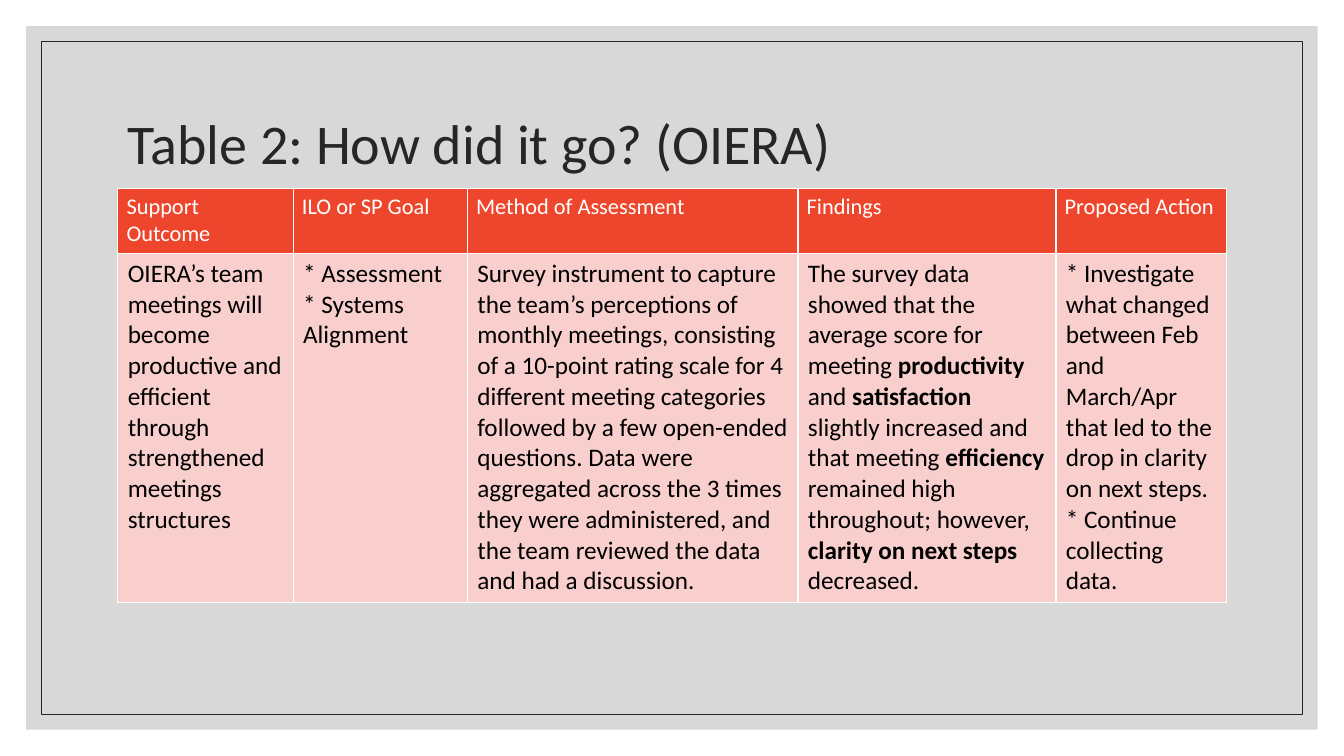
from dataclasses import dataclass

from lxml import etree
from pptx import Presentation
from pptx.dml.color import RGBColor
from pptx.enum import shapes, text
from pptx.oxml import ns
from pptx.util import Cm, Pt


@dataclass(frozen=True)
class Theme:
    font: str = "Calibri"
    ink: RGBColor = RGBColor(0x26, 0x26, 0x26)
    panel: RGBColor = RGBColor(0xBF, 0xBF, 0xBF)
    header: RGBColor = RGBColor(0xEE, 0x46, 0x2D)
    body: RGBColor = RGBColor(0xF8, 0xCF, 0xCD)
    white: RGBColor = RGBColor(0xFF, 0xFF, 0xFF)
    black: RGBColor = RGBColor(0, 0, 0)
    title_size: int = 40
    header_size: int = 16
    body_size: int = 18


THEME = Theme()


def write(frame, content, size, color):
    """Fill a text frame; lines become paragraphs and **marks** enclose bold text."""
    for index, line in enumerate(content.split("\n")):
        paragraph = frame.paragraphs[0] if index == 0 else frame.add_paragraph()
        paragraph.alignment = text.PP_ALIGN.LEFT
        for part, words in enumerate(line.split("**")):
            run = paragraph.add_run()
            run.text = words
            for name, value in {"name": THEME.font, "size": Pt(size), "bold": part % 2 == 1}.items():
                setattr(run.font, name, value)
            run.font.color.rgb = color


def add_borders(cell, color, width):
    properties = cell._tc.get_or_add_tcPr()
    for side in ("lnL", "lnR", "lnT", "lnB"):
        line = etree.SubElement(properties, ns.qn(f"a:{side}"), w=str(width))
        fill = etree.SubElement(line, ns.qn("a:solidFill"))
        etree.SubElement(fill, ns.qn("a:srgbClr"), val=str(color))


presentation = Presentation()
presentation.slide_width, presentation.slide_height = Cm(33.87), Cm(19.05)
slide = presentation.slides.add_slide(presentation.slide_layouts[5])
title = slide.shapes.title

# Grey panel and thin frame, each inset evenly from the slide edges, behind the title
frames = []
for inset in (0.66, 1.04):
    shape = slide.shapes.add_shape(
        shapes.MSO_SHAPE.RECTANGLE, Cm(inset), Cm(inset), Cm(33.87 - 2 * inset), Cm(19.05 - 2 * inset)
    )
    shape.shadow.inherit = False
    title._element.addprevious(shape._element)
    frames.append(shape)
panel, outline = frames
panel.fill.solid()
panel.fill.fore_color.rgb = THEME.panel
panel_color = panel._element.spPr.find(".//" + ns.qn("a:srgbClr"))
etree.SubElement(panel_color, ns.qn("a:alpha"), val="60000")
panel.line.fill.background()
outline.fill.background()
outline.line.color.rgb = THEME.ink
outline.line.width = Pt(0.5)

# Title
for name, value in {"left": Cm(2.97), "top": Cm(1.78), "width": Cm(27.94), "height": Cm(3.81)}.items():
    setattr(title, name, value)
title_format = {
    "vertical_anchor": text.MSO_ANCHOR.MIDDLE,
    "auto_size": text.MSO_AUTO_SIZE.NONE,
    "word_wrap": True,
}
for name, value in title_format.items():
    setattr(title.text_frame, name, value)
write(title.text_frame, "Table 2: How did it go? (OIERA)", THEME.title_size, THEME.ink)
title.text_frame.paragraphs[0].line_spacing = 0.9

# Assessment table: heading, width in cm, content
columns = [
    ("Support\nOutcome", 4.42,
     "OIERA’s team meetings will become productive and efficient through "
     "strengthened meetings structures"),
    ("ILO or SP Goal", 4.39, "* Assessment\n* Systems Alignment"),
    ("Method of Assessment", 8.33,
     "Survey instrument to capture the team’s perceptions of monthly meetings, consisting of a "
     "10-point rating scale for 4 different meeting categories followed by a few open-ended "
     "questions. Data were aggregated across the 3 times they were administered, and the team "
     "reviewed the data and had a discussion."),
    ("Findings", 6.5,
     "The survey data showed that the average score for meeting **productivity **and "
     "**satisfaction **slightly increased and that meeting **efficiency **remained high "
     "throughout; however, **clarity on next steps** decreased."),
    ("Proposed Action", 4.29,
     "* Investigate what changed between Feb and March/Apr that led to the drop in clarity on "
     "next steps.\n* Continue collecting data."),
]
rows = [  # height, side margin, fill, text size, text colour
    (1.63, 0.22, THEME.header, THEME.header_size, THEME.white),
    (8.8, 0.25, THEME.body, THEME.body_size, THEME.black),
]
table_width = sum(width for _, width, _ in columns)
table_height = sum(row[0] for row in rows)
table = slide.shapes.add_table(
    len(rows), len(columns), Cm(2.97), Cm(4.74), Cm(table_width), Cm(table_height)
).table
table.horz_banding = False
for column, (heading, width, content) in enumerate(columns):
    table.columns[column].width = Cm(width)
    for row, (height, margin, fill, size, color) in enumerate(rows):
        table.rows[row].height = Cm(height)
        cell = table.cell(row, column)
        cell.margin_left = cell.margin_right = Cm(margin)
        cell.margin_top = cell.margin_bottom = Cm(0.13)
        add_borders(cell, THEME.white, Pt(1))
        cell.fill.solid()
        cell.fill.fore_color.rgb = fill
        write(cell.text_frame, (heading, content)[row], size, color)

presentation.save("out.pptx")
